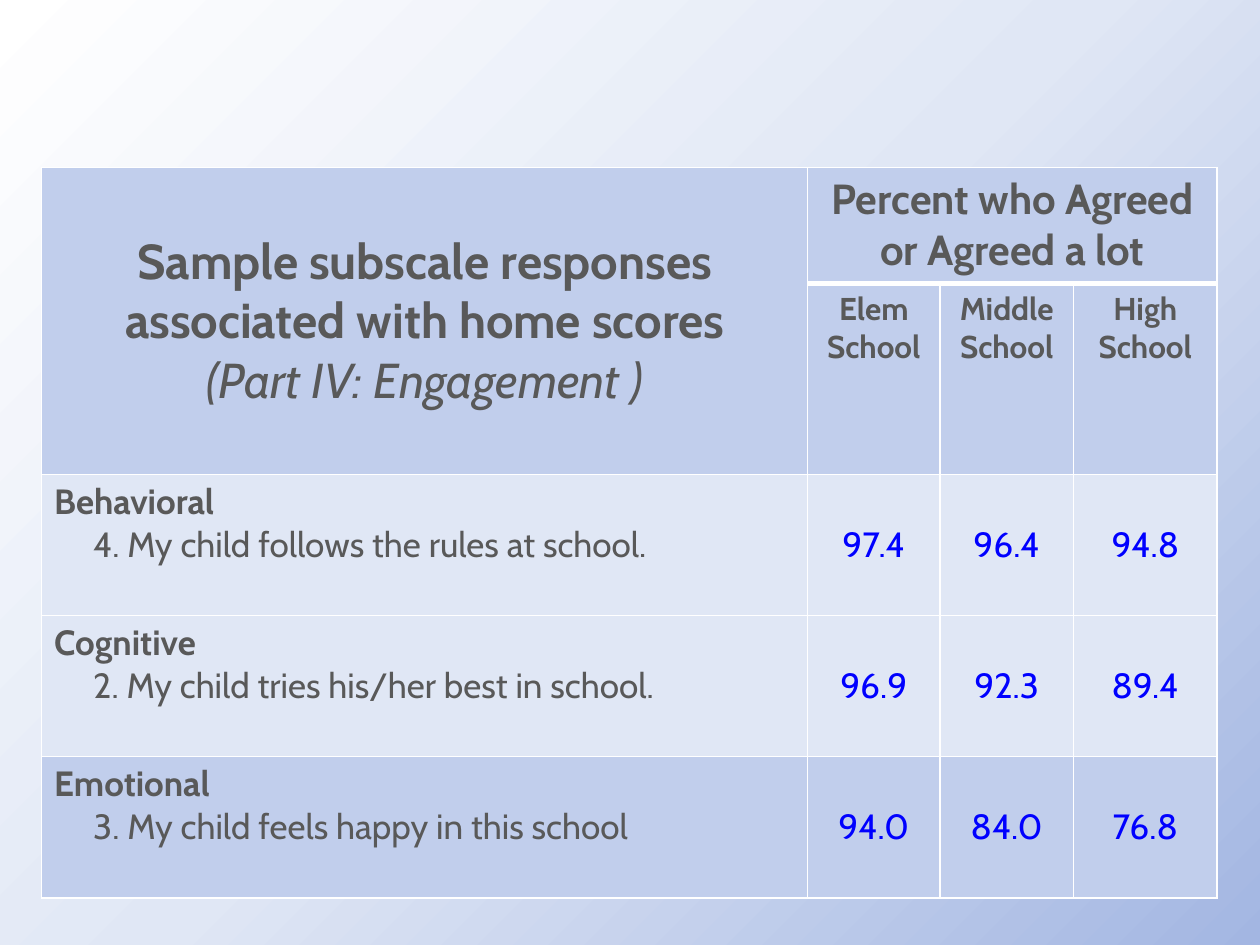
from pptx import Presentation
from pptx.dml.color import RGBColor
from pptx.enum.text import MSO_ANCHOR, PP_ALIGN
from pptx.oxml import parse_xml
from pptx.oxml.ns import nsdecls
from pptx.util import Inches, Pt

CENTER, LEFT = PP_ALIGN.CENTER, PP_ALIGN.LEFT
TOP, MIDDLE = MSO_ANCHOR.TOP, MSO_ANCHOR.MIDDLE

FONT = "Cabin"
COLORS = {
    "text": "595959",
    "value": "0000FF",
    "dark": "C1CEEC",
    "light": "E0E7F5",
    "line": "FFFFFF",
}
BACKGROUND_STOPS = [(0, "A3B6E2"), (50, "E0E7F5"), (100, "FFFFFF")]

COLUMN_WIDTHS = [6.08, 1.05, 1.06, 1.14]
ROW_HEIGHTS = [0.92, 1.51, 1.12, 1.12, 1.12]
SCHOOLS = ["Elem School", "Middle School", "High School"]
# Subscale, sample item, percent by school, row fill
RESPONSES = [
    ("Behavioral", "4. My child follows the rules at school.",
     ["97.4", "96.4", "94.8"], "light"),
    ("Cognitive", "2. My child tries his/her best in school.",
     ["96.9", "92.3", "89.4"], "light"),
    ("Emotional", "3. My child feels happy in this school",
     ["94.0", "84.0", "76.8"], "dark"),
]


def set_background(page):
    """Fill the page with a gradient that spreads from the bottom right."""
    stops = "".join(
        f'<a:gs pos="{place * 1000}"><a:srgbClr val="{color}"/></a:gs>'
        for place, color in BACKGROUND_STOPS
    )
    background = parse_xml(
        f'<p:bg {nsdecls("p", "a")}><p:bgPr><a:gradFill rotWithShape="1">'
        f'<a:gsLst>{stops}</a:gsLst><a:path path="circle">'
        '<a:fillToRect l="100000" t="100000"/></a:path></a:gradFill>'
        '<a:effectLst/></p:bgPr></p:bg>'
    )
    page.element.cSld.insert(0, background)


def style_cell(cell, fill, anchor=TOP, top=1, bottom=1):
    """Set fill, anchor and white borders; top and bottom widths in points."""
    cell.vertical_anchor = anchor
    properties = cell._tc.get_or_add_tcPr()
    for side, width in (("L", 1), ("R", 1), ("T", top), ("B", bottom)):
        properties.append(parse_xml(
            f'<a:ln{side} {nsdecls("a")} w="{Pt(width)}"><a:solidFill>'
            f'<a:srgbClr val="{COLORS["line"]}"/></a:solidFill></a:ln{side}>'
        ))
    cell.fill.solid()
    cell.fill.fore_color.rgb = RGBColor.from_string(COLORS[fill])


def style_para(para, size, bold=False, color="text", align=CENTER):
    para.alignment = align
    para.font.name = FONT
    para.font.size = Pt(size)
    para.font.bold = bold
    para.font.color.rgb = RGBColor.from_string(COLORS[color])


def write(cell, text, *style, **options):
    para = cell.text_frame.paragraphs[0]
    para.text = text
    style_para(para, *style, **options)


def fill_header(table):
    """Title over two rows, group heading over the three school columns."""
    title, group = table.cell(0, 0), table.cell(0, 1)
    title.merge(table.cell(1, 0))
    group.merge(table.cell(0, 3))
    for row in range(2):
        style_cell(table.cell(row, 0), "dark", MIDDLE)
    for column in range(1, 4):
        style_cell(table.cell(0, column), "dark", bottom=3)

    para = title.text_frame.paragraphs[0]
    style_para(para, 28)
    heading = para.add_run()
    heading.text = "Sample subscale responses associated with home scores"
    heading.font.bold = True
    para.add_line_break()
    part = para.add_run()
    part.text = "(Part IV: Engagement )"
    part.font.italic = True
    for span in (heading, part):
        span.font.name = FONT
        span.font.size = Pt(28)
        span.font.color.rgb = RGBColor.from_string(COLORS["text"])

    write(group, "Percent who Agreed or Agreed a lot", 24, bold=True)
    for column, school in enumerate(SCHOOLS, 1):
        cell = table.cell(1, column)
        style_cell(cell, "dark", top=3)
        write(cell, school, 18, bold=True)


def fill_responses(table):
    """One row for each subscale."""
    for row, (subscale, item, values, fill) in enumerate(RESPONSES, 2):
        label = table.cell(row, 0)
        style_cell(label, fill)
        write(label, subscale, 20, bold=True, align=LEFT)
        para = label.text_frame.add_paragraph()
        para.text = item
        style_para(para, 20, align=LEFT)
        para._p.get_or_add_pPr().set("marL", str(Inches(0.31)))
        for column, value in enumerate(values, 1):
            cell = table.cell(row, column)
            style_cell(cell, fill, MIDDLE)
            write(cell, value, 20, color="value")


def add_response_table(page, left, top):
    width, height = Inches(sum(COLUMN_WIDTHS)), Inches(sum(ROW_HEIGHTS))
    table = page.shapes.add_table(
        len(ROW_HEIGHTS), len(COLUMN_WIDTHS), left, top, width, height).table
    table.first_row = table.horz_banding = False
    for column, size in zip(table.columns, COLUMN_WIDTHS):
        column.width = Inches(size)
    for row, size in zip(table.rows, ROW_HEIGHTS):
        row.height = Inches(size)
    fill_header(table)
    fill_responses(table)


def main():
    deck = Presentation()
    deck.slide_width, deck.slide_height = Inches(10), Inches(7.5)
    page = deck.slides.add_slide(deck.slide_layouts[6])
    set_background(page)
    add_response_table(page, Inches(0.33), Inches(1.33))
    deck.save("out.pptx")


if __name__ == "__main__":
    main()
